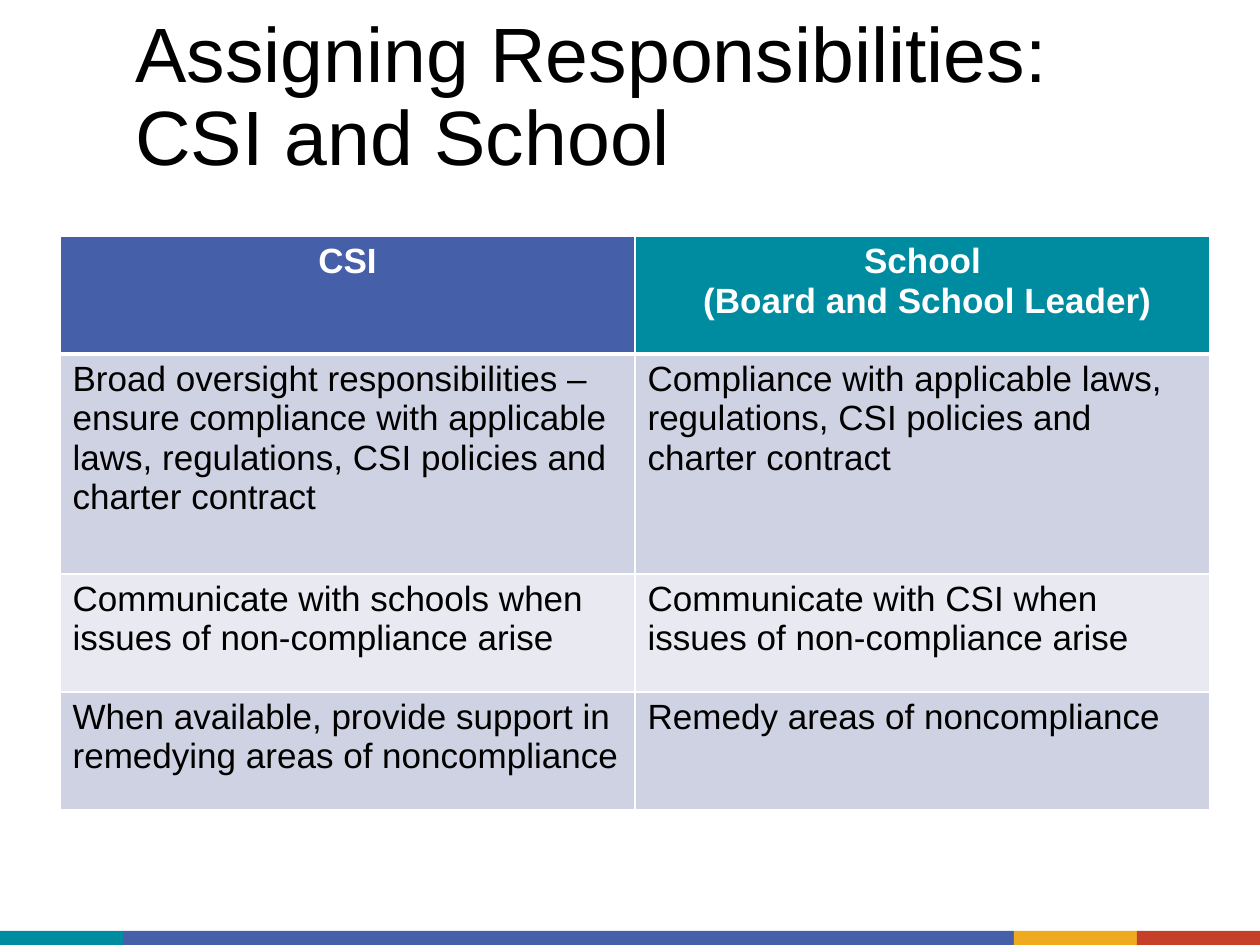
from pptx import Presentation
from pptx.dml.color import RGBColor
from pptx.enum.shapes import MSO_SHAPE
from pptx.enum.text import MSO_ANCHOR, PP_ALIGN
from pptx.oxml.ns import qn
from pptx.util import Pt
from lxml.etree import SubElement

EMU_PER_PX = 914400 / 126
SLIDE_WIDTH, SLIDE_HEIGHT = 1260, 945
FONT = "Arial"
BLACK, WHITE = "000000", "FFFFFF"
TEAL, BLUE, YELLOW, RED = "008CA0", "455FA9", "EFAA1F", "C63F28"

TITLE = "Assigning Responsibilities:\vCSI and School"
TITLE_BOX = (123, 38, 1060, 157)

ROWS = [
    ("CSI", "School\n (Board and School Leader)"),
    ("Broad oversight responsibilities – ensure compliance with applicable laws, "
     "regulations, CSI policies and charter contract",
     "Compliance with applicable laws, regulations, CSI policies and charter contract"),
    ("Communicate with schools when issues of non-compliance arise",
     "Communicate with CSI when issues of non-compliance arise"),
    ("When available, provide support in remedying areas of noncompliance",
     "Remedy areas of noncompliance"),
]
TABLE_LEFT, TABLE_TOP, COLUMN_WIDTH = 60, 236, 575
ROW_HEIGHTS = [118, 220, 118, 118]
HEADER_FILLS = [BLUE, TEAL]
BAND_FILLS = ["CFD2E2", "E9EAF1"]

FOOTER_HEIGHT = 14
FOOTER_BANDS = [(TEAL, 123), (BLUE, 891), (YELLOW, 123), (RED, 123)]


def px(value):
    return round(value * EMU_PER_PX)


def color(hex_string):
    return RGBColor.from_string(hex_string)


def style_font(font, size, hex_string, bold=False):
    font.name = FONT
    font.size = Pt(size)
    font.bold = bold
    font.color.rgb = color(hex_string)


def set_borders(cell, widths):
    """Draw white cell borders; widths maps a side (L, R, T, B) to points."""
    properties = cell._tc.get_or_add_tcPr()
    for side, width in widths.items():
        line = SubElement(properties, qn(f"a:ln{side}"), w=str(Pt(width)))
        fill = SubElement(line, qn("a:solidFill"))
        SubElement(fill, qn("a:srgbClr"), val=WHITE)


def add_footer(slide):
    left = 0
    for fill, width in FOOTER_BANDS:
        band = slide.shapes.add_shape(
            MSO_SHAPE.RECTANGLE, px(left), px(SLIDE_HEIGHT - FOOTER_HEIGHT),
            px(width), px(FOOTER_HEIGHT))
        band.shadow.inherit = False
        band.fill.solid()
        band.fill.fore_color.rgb = color(fill)
        band.line.fill.background()
        left += width


def add_title(slide):
    text_frame = slide.shapes.add_textbox(*map(px, TITLE_BOX)).text_frame
    text_frame.word_wrap = True
    text_frame.vertical_anchor = MSO_ANCHOR.BOTTOM
    text_frame.margin_left = text_frame.margin_right = Pt(7.2)
    text_frame.margin_top = text_frame.margin_bottom = Pt(7.2)
    text_frame.text = TITLE
    paragraph = text_frame.paragraphs[0]
    paragraph.line_spacing = 0.9
    for run in paragraph.runs:
        style_font(run.font, 44, BLACK)


def fill_cell(cell, text, row, column):
    is_header = row == 0
    set_borders(cell, {"L": 1, "R": 1, "T": 3 if row == 1 else 1,
                       "B": 3 if is_header else 1})
    cell.fill.solid()
    fill = HEADER_FILLS[column] if is_header else BAND_FILLS[(row - 1) % 2]
    cell.fill.fore_color.rgb = color(fill)
    cell.text_frame.text = text
    for paragraph in cell.text_frame.paragraphs:
        paragraph.alignment = PP_ALIGN.CENTER if is_header else PP_ALIGN.LEFT
        for run in paragraph.runs:
            style_font(run.font, 20, WHITE if is_header else BLACK, is_header)


def add_responsibilities(slide):
    columns = len(HEADER_FILLS)
    table = slide.shapes.add_table(
        len(ROWS), columns, px(TABLE_LEFT), px(TABLE_TOP),
        px(COLUMN_WIDTH * columns), px(sum(ROW_HEIGHTS))).table
    for column in table.columns:
        column.width = px(COLUMN_WIDTH)
    for row, (texts, height) in enumerate(zip(ROWS, ROW_HEIGHTS)):
        table.rows[row].height = px(height)
        for column, text in enumerate(texts):
            fill_cell(table.cell(row, column), text, row, column)


def main():
    presentation = Presentation()
    presentation.slide_width = px(SLIDE_WIDTH)
    presentation.slide_height = px(SLIDE_HEIGHT)
    slide = presentation.slides.add_slide(presentation.slide_layouts[6])
    add_footer(slide)
    add_title(slide)
    add_responsibilities(slide)
    presentation.save("out.pptx")


if __name__ == "__main__":
    main()
